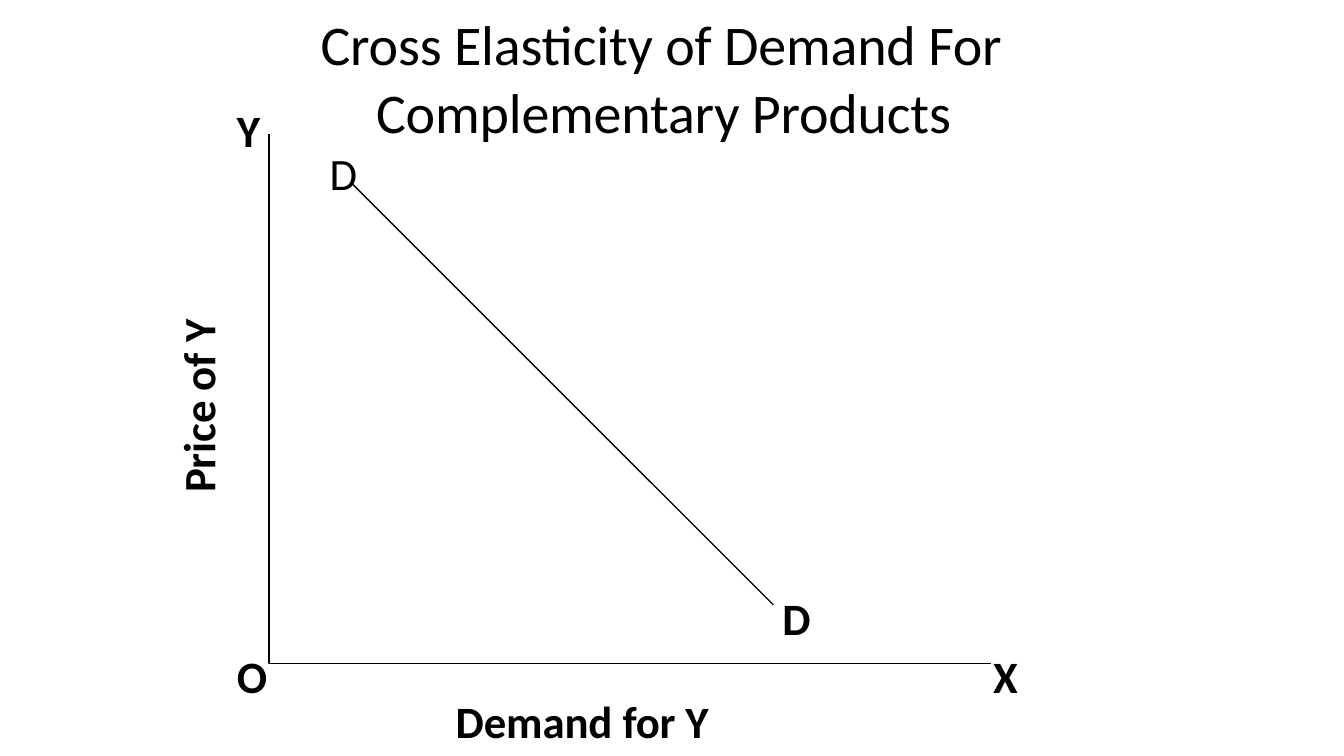
from lxml.etree import SubElement
from pptx import Presentation
from pptx.dml.color import RGBColor
from pptx.enum.shapes import MSO_CONNECTOR
from pptx.enum.text import MSO_ANCHOR, MSO_AUTO_SIZE, PP_ALIGN
from pptx.oxml.ns import qn
from pptx.util import Pt

EMU_PER_PX = 9144  # 100 px to the inch
BLACK = "000000"
FONT = "Calibri"


def px(length):
    return length * EMU_PER_PX


def colour(hex_code):
    return RGBColor.from_string(hex_code)


def write(paragraph, runs, size=32, bold=True, left=1, indent=0, before=0, line=None):
    """Fill a paragraph with (text, letter spacing in 1/100 pt) runs."""
    properties = paragraph._p.get_or_add_pPr()
    properties.set("marL", str(px(left)))
    properties.set("indent", str(px(indent)))
    paragraph.alignment = PP_ALIGN.LEFT
    paragraph.space_before = Pt(before)
    if line:
        paragraph.line_spacing = Pt(line)
    for text, spacing in runs:
        run = paragraph.add_run()
        run.text = text
        run.font.name = FONT
        run.font.size = Pt(size)
        run.font.bold = bold
        run.font.color.rgb = colour(BLACK)
        run._r.get_or_add_rPr().set("spc", str(spacing))


def set_frame(frame, top=1):
    frame.word_wrap = True
    frame.auto_size = MSO_AUTO_SIZE.NONE
    frame.margin_left = frame.margin_right = frame.margin_bottom = 0
    frame.margin_top = px(top)


def add_label(slide, x, y, width, height, runs, upward=False):
    frame = slide.shapes.add_textbox(px(x), px(y), px(width), px(height)).text_frame
    set_frame(frame, top=0 if upward else 1)
    if upward:
        frame._txBody.bodyPr.set("vert", "vert270")
    write(frame.paragraphs[0], runs, line=31.4 if upward else None)


def set_stroke(line):
    line.color.rgb = colour(BLACK)
    line.width = Pt(1)


def add_line(slide, x1, y1, x2, y2):
    connector = slide.shapes.add_connector(
        MSO_CONNECTOR.STRAIGHT, px(x1), px(y1), px(x2), px(y2))
    set_stroke(connector.line)
    SubElement(connector._element.spPr, qn("a:effectLst"))


def add_outline(slide, start, *corners):
    builder = slide.shapes.build_freeform(*start, scale=EMU_PER_PX)
    builder.add_line_segments(corners, close=False)
    outline = builder.convert_to_shape()
    outline.fill.background()
    outline.shadow.inherit = False
    set_stroke(outline.line)


def set_title(slide):
    title = slide.shapes.title
    title.left, title.top, title.width, title.height = map(px, (318, 8, 698, 191))
    frame = title.text_frame
    set_frame(frame)
    frame.vertical_anchor = MSO_ANCHOR.MIDDLE
    heading = [("Cross Elasticity of Demand ", -10), ("For ", -20),
               ("Complementary Products", -10)]
    write(frame.paragraphs[0], heading, size=40, bold=False, left=55, indent=-55)
    # Upper end of the demand curve
    write(frame.add_paragraph(), [("D", 0)], bold=False, left=9, before=1.1)


def main():
    presentation = Presentation()
    presentation.slide_width, presentation.slide_height = px(1333), px(750)
    slide = presentation.slides.add_slide(presentation.slide_layouts[5])
    set_title(slide)

    # Axes and demand curve
    add_outline(slide, (267, 133), (267, 658), (983, 658))
    add_line(slide, 350, 183, 767, 600)

    # Axis ends and lower end of the curve
    for letter, x, y, width in (("O", 234, 643, 33), ("Y", 234, 101, 26),
                                ("X", 984, 643, 27), ("D", 775, 585, 31)):
        add_label(slide, x, y, width, 56, [(letter, 0)])

    # Axis titles
    add_label(slide, 179, 315, 44, 175, [("Price ", -10), ("of Y", 0)], upward=True)
    add_label(slide, 451, 687, 255, 56, [("Demand ", -10), ("for ", -20), ("Y", 0)])

    presentation.save("out.pptx")


if __name__ == "__main__":
    main()
